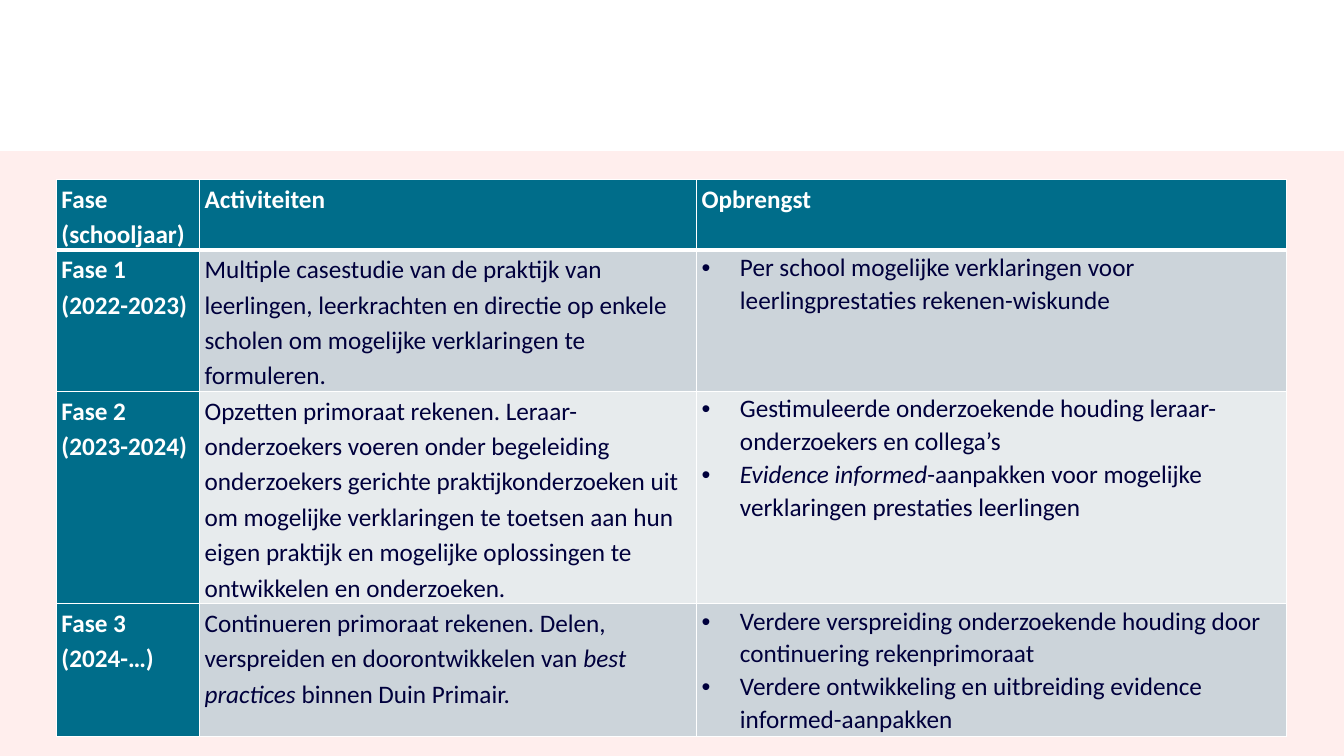
from lxml import etree
from pptx import Presentation
from pptx.dml.color import RGBColor
from pptx.enum.shapes import MSO_SHAPE
from pptx.enum.text import PP_ALIGN
from pptx.oxml.ns import qn
from pptx.util import Inches, Pt

RECTANGLE = MSO_SHAPE.RECTANGLE
LEFT = PP_ALIGN.LEFT
COLORS = {
    "panel": "FFE1DF",
    "teal": "006D8A",
    "band_dark": "CCD4DA",
    "band_light": "E7EBED",
    "navy": "00003C",
    "white": "FFFFFF",
}
FONT = "Calibri"
COLUMN_WIDTHS = [1.42, 4.93, 5.85]
ROW_HEIGHTS = [0.64, 1.23, 1.62, 1.32]
OUTCOME_COLUMN = 2

# Each cell is a list of paragraphs, each paragraph a list of (text, italic) runs.
ROWS = [
    [
        [[("Fase (schooljaar)", False)]],
        [[("Activiteiten", False)]],
        [[("Opbrengst", False)]],
    ],
    [
        [[("Fase 1\n(2022-2023)", False)]],
        [[("Multiple casestudie van de praktijk van leerlingen, leerkrachten en directie "
           "op enkele scholen om mogelijke verklaringen te formuleren.", False)]],
        [[("Per school mogelijke verklaringen voor leerlingprestaties rekenen-wiskunde", False)]],
    ],
    [
        [[("Fase 2\n(2023-2024)", False)]],
        [[("Opzetten primoraat rekenen. Leraar-onderzoekers voeren onder begeleiding "
           "onderzoekers gerichte praktijkonderzoeken uit om mogelijke verklaringen te "
           "toetsen aan hun eigen praktijk en mogelijke oplossingen te ontwikkelen en "
           "onderzoeken.", False)]],
        [
            [("Gestimuleerde onderzoekende houding leraar-onderzoekers en collega’s", False)],
            [("Evidence informed", True),
             ("-aanpakken voor mogelijke verklaringen prestaties leerlingen", False)],
        ],
    ],
    [
        [[("Fase 3 (2024-…)", False)]],
        [[("Continueren primoraat rekenen. Delen, verspreiden en doorontwikkelen van ", False),
          ("best practices", True),
          (" binnen Duin Primair.", False)]],
        [
            [("Verdere verspreiding onderzoekende houding door continuering rekenprimoraat", False)],
            [("Verdere ontwikkeling en uitbreiding evidence informed-aanpakken", False)],
        ],
    ],
]


def add_borders(cell, bottom_width):
    properties = cell._tc.get_or_add_tcPr()
    for side, width in (("L", 1), ("R", 1), ("T", 1), ("B", bottom_width)):
        line = etree.SubElement(properties, qn(f"a:ln{side}"), w=str(Pt(width)))
        fill = etree.SubElement(line, qn("a:solidFill"))
        etree.SubElement(fill, qn("a:srgbClr"), val=COLORS["white"])


def fill_paragraph(paragraph, runs, color, bold, bulleted):
    if bulleted:
        properties = paragraph._p.get_or_add_pPr()
        properties.set("marL", str(Inches(0.38)))
        properties.set("indent", str(-Inches(0.38)))
        etree.SubElement(properties, qn("a:buFont"), typeface="Arial")
        etree.SubElement(properties, qn("a:buChar"), char="•")
    paragraph.alignment = LEFT
    paragraph.line_spacing = 1.07 if bulleted else 1.15
    for text, italic in runs:
        for index, part in enumerate(text.split("\n")):
            if index:
                paragraph.add_line_break()
            run = paragraph.add_run()
            run.text = part
            run.font.name = FONT
            run.font.size = Pt(18)
            run.font.bold = bold
            run.font.italic = italic
            run.font.color.rgb = RGBColor.from_string(color)


presentation = Presentation()
presentation.slide_width = Inches(13.33)
presentation.slide_height = Inches(7.5)
slide = presentation.slides.add_slide(presentation.slide_layouts[6])

panel_top = presentation.slide_height // 5
panel = slide.shapes.add_shape(
    RECTANGLE, 0, panel_top, presentation.slide_width, presentation.slide_height - panel_top
)
panel.shadow.inherit = False
panel.line.fill.background()
panel.fill.solid()
panel.fill.fore_color.rgb = RGBColor.from_string(COLORS["panel"])
panel_color = panel._element.spPr.find(qn("a:solidFill")).find(qn("a:srgbClr"))
etree.SubElement(panel_color, qn("a:alpha"), val="56000")

table = slide.shapes.add_table(
    len(ROWS), len(COLUMN_WIDTHS), Inches(0.56), Inches(1.78),
    Inches(sum(COLUMN_WIDTHS)), Inches(sum(ROW_HEIGHTS)),
).table
for column, width in zip(table.columns, COLUMN_WIDTHS):
    column.width = Inches(width)
for row, height in zip(table.rows, ROW_HEIGHTS):
    row.height = Inches(height)

for row_index, row_content in enumerate(ROWS):
    for column_index, paragraphs in enumerate(row_content):
        cell = table.cell(row_index, column_index)
        heading = row_index == 0 or column_index == 0
        bulleted = column_index == OUTCOME_COLUMN and not heading
        band = "band_dark" if row_index % 2 else "band_light"
        add_borders(cell, 3 if row_index == 0 else 1)
        cell.fill.solid()
        cell.fill.fore_color.rgb = RGBColor.from_string(COLORS["teal" if heading else band])
        cell.margin_left = cell.margin_right = Inches(0.05)
        cell.margin_top = cell.margin_bottom = 0
        text_frame = cell.text_frame
        for index, runs in enumerate(paragraphs):
            paragraph = text_frame.add_paragraph() if index else text_frame.paragraphs[0]
            color = COLORS["white" if heading else "navy"]
            fill_paragraph(paragraph, runs, color, heading, bulleted)
            paragraph.space_after = Pt(8 if index == len(paragraphs) - 1 else 0)

presentation.save("out.pptx")
